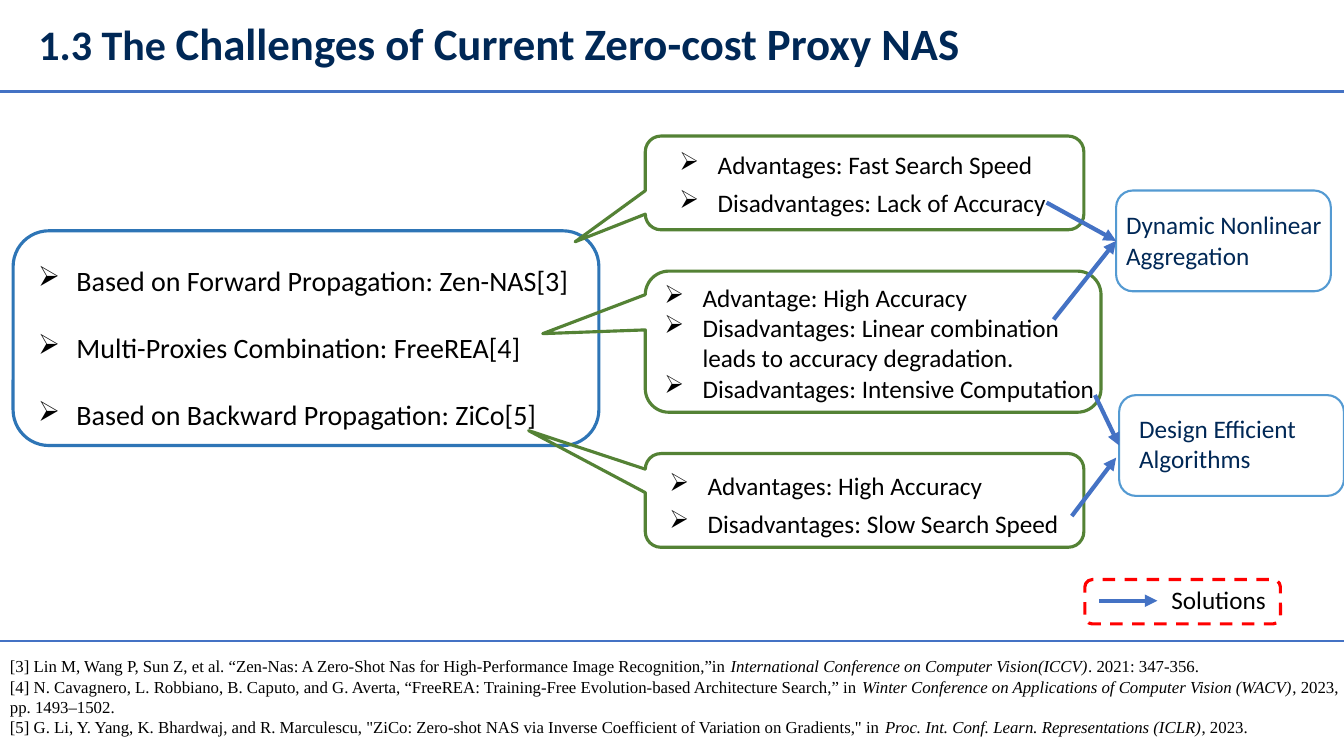
import pptx
import pptx.dml.color
import pptx.enum.dml
import pptx.enum.shapes
import pptx.enum.text
import pptx.oxml.ns
from lxml import etree
from pptx.util import Inches

NAVY, BLACK = "002856", "000000"
ARROW_BLUE, FRAME_BLUE, SOLUTION_BLUE = "4472C4", "2E75B6", "549AD2"
GREEN, RED = "548235", "FF0000"
SLIDE_WIDTH, SLIDE_HEIGHT = 13.33, 7.5
HANGING = 0.38

TITLE = [("1.3 The ", 30), ("Challenges of Current Zero-cost Proxy NAS", 32)]

METHODS = [
    "Based on Forward Propagation: Zen-NAS[3]",
    "Multi-Proxies Combination: FreeREA[4]",
    "Based on Backward Propagation: ZiCo[5]",
]

# Box, callout adjustments, text offset, text width, line spacing, points
CALLOUTS = [
    ((6.4, 1.35, 4.35, 0.93), (-0.66, 0.628, 0.167), (0.24, 0.01), 4.46, 1.25,
     ["Advantages: Fast Search Speed", "Disadvantages: Lack of Accuracy"]),
    ((6.4, 4.5, 4.35, 0.93), (-0.766, -0.745, 0.167), (0.14, 0.04), 4.66, 1.25,
     ["Advantages: High Accuracy", "Disadvantages: Slow Search Speed"]),
    ((6.4, 2.69, 4.52, 1.4), (-0.725, -0.057, 0.167), (0.09, 0.06), 4.58, 1,
     ["Advantage: High Accuracy",
      "Disadvantages: Linear combination leads to accuracy degradation.",
      "Disadvantages: Intensive Computation"]),
]

# Box, text offset, text
SOLUTIONS = [
    ((11.07, 1.89, 2.13, 1), (0, 0.14), "Dynamic Nonlinear Aggregation"),
    ((11.1, 3.92, 2.23, 1), (0.1, 0.13), "Design Efficient Algorithms"),
]

SOLUTION_ARROWS = [
    ((10.45, 3.17), (11.07, 2.39)),
    ((10.38, 2.01), (11.07, 2.39)),
    ((10.86, 3.92), (11.1, 4.42)),
    ((10.63, 5.12), (11.07, 4.54)),
]

# Text before the venue, venue, text after it
REFERENCES = [
    ("[3] Lin M, Wang P, Sun Z, et al. “Zen-Nas: A Zero-Shot Nas for "
     "High-Performance Image Recognition,”in ",
     "International Conference on Computer Vision(ICCV)", ". 2021: 347-356."),
    ("[4] N. Cavagnero, L. Robbiano, B. Caputo, and G. Averta, “FreeREA: "
     "Training-Free Evolution-based Architecture Search,” in ",
     "Winter Conference on Applications of Computer Vision (WACV)",
     ", 2023, pp. 1493–1502."),
    ("[5] G. Li, Y. Yang, K. Bhardwaj, and R. Marculescu, \"ZiCo: Zero-shot NAS "
     "via Inverse Coefficient of Variation on Gradients,\" in ",
     "Proc. Int. Conf. Learn. Representations (ICLR)", ", 2023."),
]


def rgb(color):
    return pptx.dml.color.RGBColor.from_string(color)


def set_font(font, size, color, name="Calibri"):
    font.name = name
    font.size = pptx.util.Pt(size)
    font.color.rgb = rgb(color)


def add_outline(slide, kind, box, color, width, adjustments=()):
    """Add an unfilled preset shape."""
    shape = slide.shapes.add_shape(kind, *map(Inches, box))
    shape.shadow.inherit = False
    shape.fill.background()
    shape.line.color.rgb = rgb(color)
    shape.line.width = pptx.util.Pt(width)
    for index, value in enumerate(adjustments):
        shape.adjustments[index] = value
    return shape


def add_rounded_frame(slide, box, color, width):
    kind = pptx.enum.shapes.MSO_SHAPE.ROUNDED_RECTANGLE
    return add_outline(slide, kind, box, color, width)


def add_line(slide, start, end, width, arrow=False):
    line = slide.shapes.add_connector(
        pptx.enum.shapes.MSO_CONNECTOR.STRAIGHT, *map(Inches, start + end))
    line.line.color.rgb = rgb(ARROW_BLUE)
    line.line.width = pptx.util.Pt(width)
    if arrow:
        etree.SubElement(line.line._get_or_add_ln(),
                         pptx.oxml.ns.qn("a:tailEnd"), type="triangle")
    etree.SubElement(line._element.spPr, pptx.oxml.ns.qn("a:effectLst"))


def add_text(slide, box, texts, size, color=BLACK, spacing=1, bullets=False):
    """Add a wrapping text box with one paragraph for each text."""
    frame = slide.shapes.add_textbox(*map(Inches, box)).text_frame
    frame.word_wrap = True
    for index, text in enumerate(texts):
        paragraph = frame.add_paragraph() if index else frame.paragraphs[0]
        paragraph.text = text
        paragraph.line_spacing = spacing
        if bullets:
            properties = paragraph._p.get_or_add_pPr()
            properties.set("marL", str(Inches(HANGING)))
            properties.set("indent", str(-Inches(HANGING)))
            etree.SubElement(properties, pptx.oxml.ns.qn("a:buChar"), char="➢")
        set_font(paragraph.font, size, color)


def add_title(slide, box):
    title = slide.shapes.title
    title.left, title.top, title.width, title.height = map(Inches, box)
    frame = title.text_frame
    frame.word_wrap = True
    frame.auto_size = pptx.enum.text.MSO_AUTO_SIZE.NONE
    frame.vertical_anchor = pptx.enum.text.MSO_ANCHOR.MIDDLE
    paragraph = frame.paragraphs[0]
    paragraph.alignment = pptx.enum.text.PP_ALIGN.LEFT
    paragraph.line_spacing = 0.9
    for text, size in TITLE:
        run = paragraph.add_run()
        run.text = text
        set_font(run.font, size, NAVY)
        run.font.bold = True


def add_methods(slide, box):
    left, top, width, height = box
    add_text(slide, (left + 0.15, top - 0.06, width - 0.29, height + 0.6),
             METHODS, 20, spacing=2, bullets=True)
    add_rounded_frame(slide, box, FRAME_BLUE, 2.25)


def add_callout(slide, box, adjustments, offset, text_width, spacing, points):
    left, top, width, height = box
    kind = pptx.enum.shapes.MSO_SHAPE.ROUNDED_RECTANGULAR_CALLOUT
    add_outline(slide, kind, box, GREEN, 2.25, adjustments)
    add_text(slide, (left + offset[0], top + offset[1], text_width, height),
             points, 18, spacing=spacing, bullets=True)


def add_solution(slide, box, offset, text):
    left, top, width, height = box
    add_rounded_frame(slide, box, SOLUTION_BLUE, 1.5)
    add_text(slide, (left + offset[0], top + offset[1], 2.26, 0.71),
             [text], 18, NAVY)


def add_legend(slide, box):
    left, top, width, height = box
    middle = top + 0.21
    add_line(slide, (left + 0.14, middle), (left + 0.72, middle), 3, arrow=True)
    add_text(slide, (left + 0.76, top, 1.37, 0.4), ["Solutions"], 18)
    frame = add_rounded_frame(slide, box, RED, 2.25)
    frame.line.dash_style = pptx.enum.dml.MSO_LINE.DASH


def add_references(slide, box):
    frame = slide.shapes.add_textbox(*map(Inches, box)).text_frame
    frame.word_wrap = True
    for index, parts in enumerate(REFERENCES):
        paragraph = frame.add_paragraph() if index else frame.paragraphs[0]
        set_font(paragraph.font, 12, BLACK, "Times New Roman")
        for position, text in enumerate(parts):
            run = paragraph.add_run()
            run.text = text
            run.font.italic = position == 1


def main():
    presentation = pptx.Presentation()
    presentation.slide_width = Inches(SLIDE_WIDTH)
    presentation.slide_height = Inches(SLIDE_HEIGHT)
    slide = presentation.slides.add_slide(presentation.slide_layouts[5])
    add_title(slide, (0.28, 0.14, 10.74, 0.64))
    for height in (0.91, 6.36):
        add_line(slide, (0, height), (SLIDE_WIDTH, height), 1.75)
    add_references(slide, (0, 6.46, 13.45, 0.91))
    add_methods(slide, (0.13, 2.29, 5.81, 2.13))
    for callout in CALLOUTS:
        add_callout(slide, *callout)
    for solution in SOLUTIONS:
        add_solution(slide, *solution)
    for start, end in SOLUTION_ARROWS:
        add_line(slide, start, end, 3, arrow=True)
    add_legend(slide, (10.76, 5.75, 1.94, 0.44))
    presentation.save("out.pptx")


if __name__ == "__main__":
    main()
